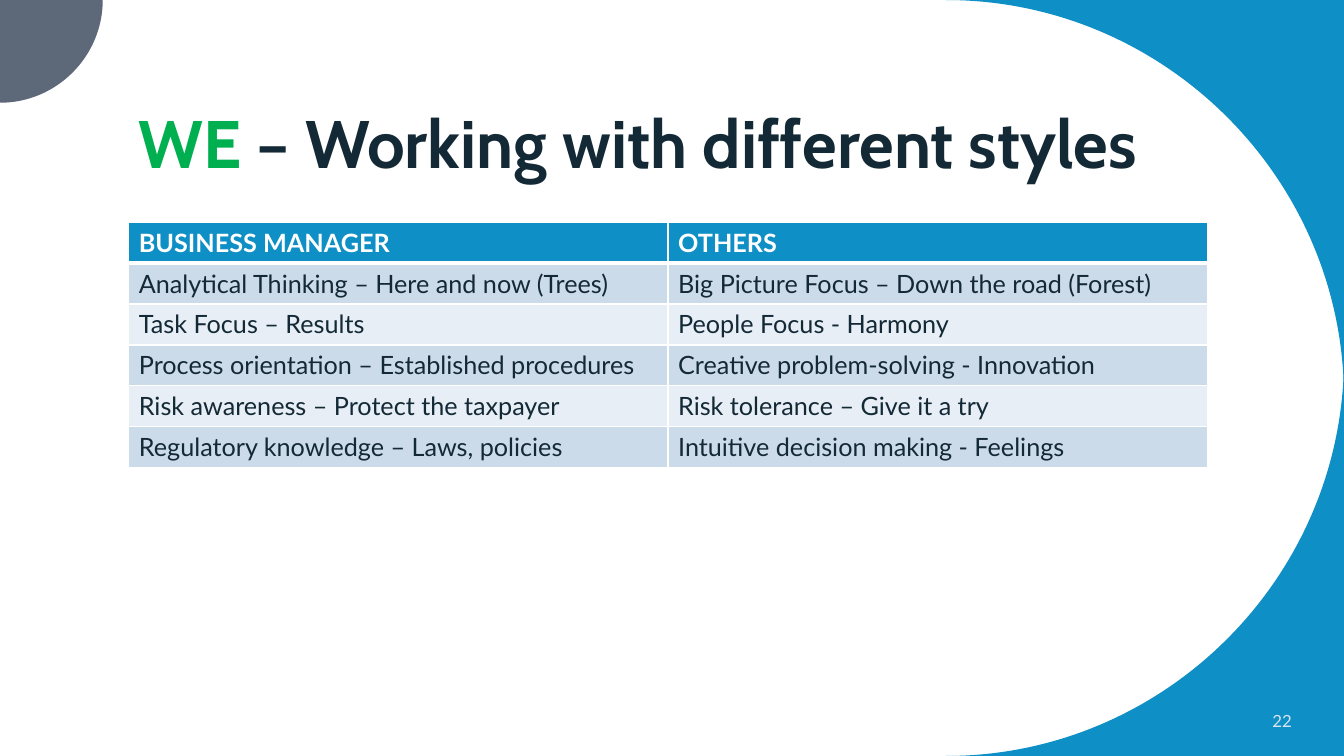
from lxml.etree import SubElement
from pptx import Presentation
from pptx.dml.color import RGBColor
from pptx.enum.text import MSO_ANCHOR as Anchor, PP_ALIGN as Align
from pptx.oxml.ns import qn
from pptx.util import Pt

WHITE = RGBColor(0xFF, 0xFF, 0xFF)
BLUE = RGBColor(0x0E, 0x8F, 0xC5)
SLATE = RGBColor(0x5D, 0x68, 0x78)
GREEN = RGBColor(0x00, 0xB0, 0x50)
NAVY = RGBColor(0x13, 0x29, 0x35)
BAND_DARK = RGBColor(0xCC, 0xDB, 0xEA)
BAND_LIGHT = RGBColor(0xE7, 0xEE, 0xF5)
PALE = RGBColor(0xDA, 0xE5, 0xEF)

WIDTH, HEIGHT = 960, 540
CURVE_RADIUS = 284.4
CORNER_RADIUS = 73.4
ARC_HANDLE = 0.55  # Bézier handle length of a quarter circle, per radius
MARGIN = 92
COLUMN_WIDTH, ROW_HEIGHT = 385.2, 29.2
UP, RIGHT, DOWN = (0, -1), (1, 0), (0, 1)

STYLES = [
    ("BUSINESS MANAGER", "OTHERS"),
    ("Analytical Thinking – Here and now (Trees)",
     "Big Picture Focus – Down the road (Forest)"),
    ("Task Focus – Results", "People Focus - Harmony"),
    ("Process orientation – Established procedures",
     "Creative problem-solving - Innovation"),
    ("Risk awareness – Protect the taxpayer", "Risk tolerance – Give it a try"),
    ("Regulatory knowledge – Laws, policies",
     "Intuitive decision making - Feelings"),
]


def format_run(run, font_name, size, color, bold=False):
    font = run.font
    font.name, font.size, font.bold = font_name, Pt(size), bold
    font.color.rgb = color


def add_corner(slide, corner, center, radius, start, end, color):
    """Fill from a corner point to the quarter circle between two directions."""
    points = []
    for along_start, along_end in ((1, 0), (1, ARC_HANDLE), (ARC_HANDLE, 1), (0, 1)):
        x, y = (middle + radius * (along_start * a + along_end * b)
                for middle, a, b in zip(center, start, end))
        points.append((Pt(x), Pt(y)))
    builder = slide.shapes.build_freeform(Pt(corner[0]), Pt(corner[1]))
    builder.add_line_segments(points, close=True)
    shape = builder.convert_to_shape()
    bend_last_lines(shape)
    shape.shadow.inherit = False
    shape.fill.solid()
    shape.fill.fore_color.rgb = color
    shape.line.fill.background()


def bend_last_lines(shape):
    """Turn the last three line points into one cubic Bézier curve."""
    lines = list(shape._element.iter(qn("a:lnTo")))[-3:]
    curve = SubElement(lines[0].getparent(), qn("a:cubicBezTo"))
    lines[0].addprevious(curve)
    for line in lines:
        curve.append(line[0])
        line.getparent().remove(line)


def add_text_box(slide, left, top, width, height, anchor):
    box = slide.shapes.add_textbox(Pt(left), Pt(top), Pt(width), Pt(height))
    frame = box.text_frame
    frame.word_wrap = True
    frame.vertical_anchor = anchor
    return frame.paragraphs[0]


def add_title(slide):
    paragraph = add_text_box(slide, MARGIN, 30.2, 769.7, 104.4, Anchor.BOTTOM)
    paragraph.line_spacing = 0.9
    for text, color in (("WE ", GREEN), ("– Working with different styles", NAVY)):
        run = paragraph.add_run()
        run.text = text
        format_run(run, "Cabin", 48, color, bold=True)


def add_page_number(slide, number):
    paragraph = add_text_box(slide, 799.5, 500.4, 130.3, 28.8, Anchor.MIDDLE)
    paragraph.text = number
    paragraph.alignment = Align.RIGHT
    format_run(paragraph.runs[0], "Lato", 12, PALE)


def set_borders(cell, top, bottom):
    """Draw white borders; top and bottom are line widths in points."""
    properties = cell._tc.get_or_add_tcPr()
    for side, width in (("L", 1), ("R", 1), ("T", top), ("B", bottom)):
        line = SubElement(properties, qn(f"a:ln{side}"), w=str(Pt(width)))
        fill = SubElement(line, qn("a:solidFill"))
        SubElement(fill, qn("a:srgbClr"), val=str(WHITE))


def add_styles_table(slide):
    columns = len(STYLES[0])
    table = slide.shapes.add_table(
        len(STYLES), columns, Pt(MARGIN), Pt(158.8),
        Pt(columns * COLUMN_WIDTH), Pt(len(STYLES) * ROW_HEIGHT)).table
    for column in table.columns:
        column.width = Pt(COLUMN_WIDTH)
    for row_index, texts in enumerate(STYLES):
        table.rows[row_index].height = Pt(ROW_HEIGHT)
        header = row_index == 0
        band = BAND_DARK if row_index % 2 else BAND_LIGHT
        for column_index, text in enumerate(texts):
            cell = table.cell(row_index, column_index)
            set_borders(cell, 3 if row_index == 1 else 1, 3 if header else 1)
            cell.fill.solid()
            cell.fill.fore_color.rgb = BLUE if header else band
            cell.text_frame.text = text
            format_run(cell.text_frame.paragraphs[0].runs[0], "Lato", 18,
                       WHITE if header else NAVY, bold=header)


def main():
    presentation = Presentation()
    presentation.slide_width, presentation.slide_height = Pt(WIDTH), Pt(HEIGHT)
    slide = presentation.slides.add_slide(presentation.slide_layouts[6])

    center_x = WIDTH - CURVE_RADIUS
    add_corner(slide, (WIDTH, 0), (center_x, CURVE_RADIUS),
               CURVE_RADIUS, UP, RIGHT, BLUE)
    add_corner(slide, (WIDTH, HEIGHT), (center_x, HEIGHT - CURVE_RADIUS),
               CURVE_RADIUS, RIGHT, DOWN, BLUE)
    add_corner(slide, (0, 0), (0, 0), CORNER_RADIUS, RIGHT, DOWN, SLATE)
    add_title(slide)
    add_styles_table(slide)
    add_page_number(slide, "22")

    presentation.save("out.pptx")


if __name__ == "__main__":
    main()
